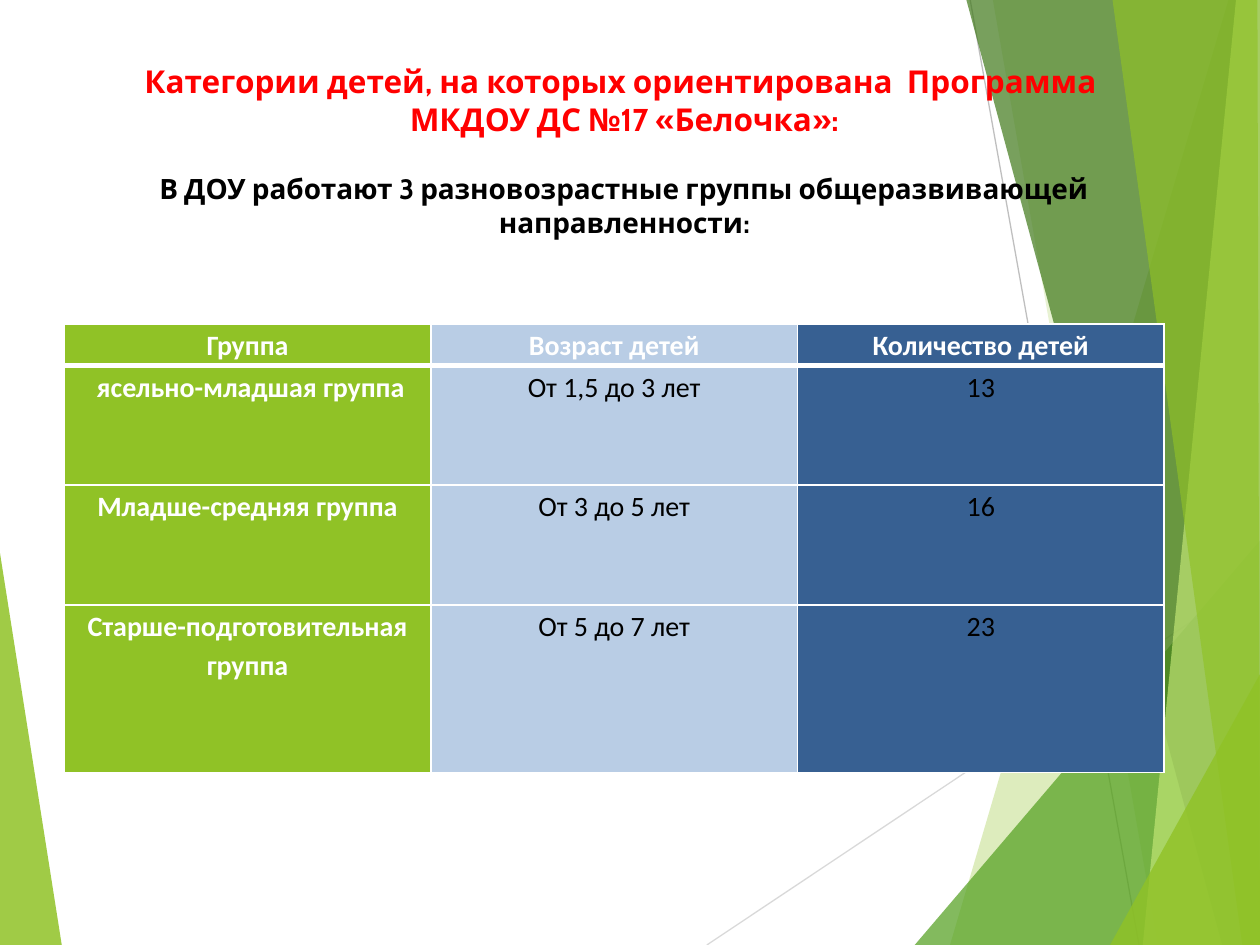
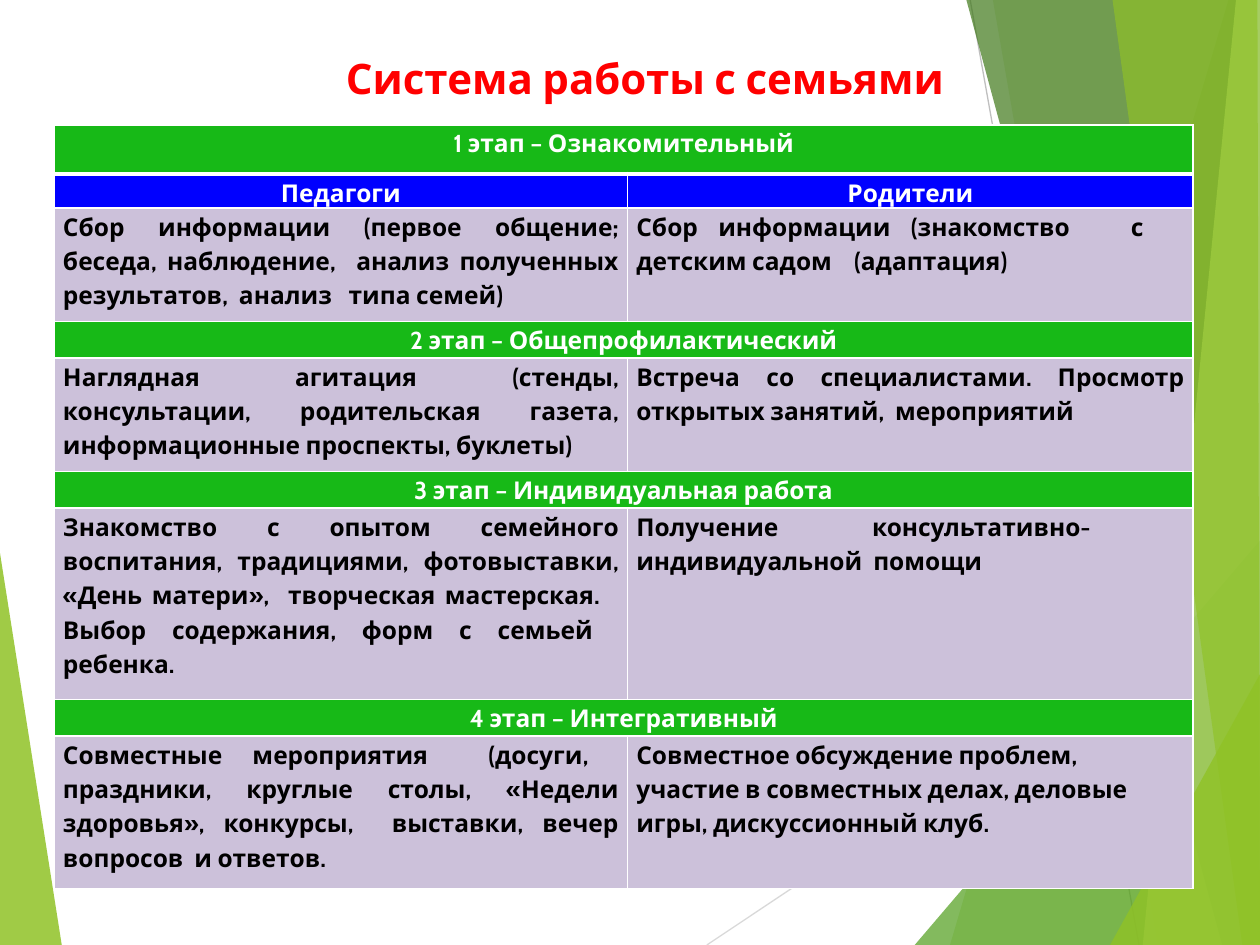
from dataclasses import dataclass

from pptx import Presentation
from pptx import util as u
from pptx.dml.color import RGBColor
from pptx.enum import shapes, text
from pptx.oxml import ns, xmlchemy

COLORS = {
    "white": "FFFFFF",
    "black": "000000",
    "red": "FF0000",
    "lime": "90C226",
    "leaf": "54A021",
    "forest": "3F7819",
    "pale_lime": "C0E474",
    "light_grey": "D9D9D9",
    "grey": "BFBFBF",
    "light_blue": "B9CDE5",
    "dark_blue": "376092",
    "stage_green": "17B917",
    "blue": "0000FF",
    "lilac": "CCC1DA",
}
HEADING_FONT = "Cabin"
TABLE_FONT = "Calibri"
CENTER, JUSTIFY, LEFT = text.PP_ALIGN.CENTER, text.PP_ALIGN.JUSTIFY, text.PP_ALIGN.LEFT


@dataclass(frozen=True)
class Facet:
    color: str
    opacity: int
    points: tuple[tuple[float, float], ...]


@dataclass(frozen=True)
class Ray:
    color: str
    start: tuple[float, float]
    end: tuple[float, float]


@dataclass(frozen=True)
class Line:
    text: str
    size: int
    color: str = "red"
    space_before: float = 0


@dataclass(frozen=True)
class CellStyle:
    fill: str
    color: str = "white"
    bold: bool = True
    align: text.PP_ALIGN = CENTER


@dataclass(frozen=True)
class Entry:
    text: str
    style: CellStyle


BACKDROP = (
    Facet("lime", 85, ((0, 4.39), (0.49, 7.5), (0, 7.5))),
    Ray("light_grey", (5.61, 7.5), (10, 4.57)),
    Ray("grey", (7.7, 0), (9.04, 7.5)),
    Facet("lime", 30, ((9.75, 0), (7.54, 7.5), (10, 7.5), (10, 0))),
    Facet("lime", 20, ((7.88, 0), (9.19, 7.5), (10, 7.5), (10, 0))),
    Facet("leaf", 72, ((7.26, 7.5), (10, 4.29), (10, 7.5))),
    Facet("forest", 70, ((7.67, 0), (9.7, 7.5), (10, 7.5), (10, 0))),
    Facet("pale_lime", 70, ((9.81, 0), (9.07, 7.5), (10, 7.5), (10, 0))),
    Facet("lime", 65, ((8.83, 0), (9.86, 7.5), (10, 7.5), (9.98, 0))),
    Facet("lime", 80, ((8.81, 7.5), (10, 5.35), (10, 7.5))),
)

GROUP_COLUMNS = ("lime", "light_blue", "dark_blue")
GROUP_ROWS = (
    ("Группа", "Возраст детей", "Количество детей"),
    (" ясельно-младшая группа", "От 1,5 до 3 лет", "13"),
    ("Младше-средняя группа", "От 3 до 5 лет", "16"),
    ("Старше-подготовительная группа", "От 5 до 7 лет", "23"),
)

STAGE = CellStyle("stage_green")
ROLE = CellStyle("blue")
WORK = CellStyle("lilac", "black", align=JUSTIFY)
WORK_LEFT = CellStyle("lilac", "black", align=LEFT)
FAMILY_ROWS = [
    [Entry("1 этап – Ознакомительный", STAGE)],
    [Entry("Педагоги", ROLE), Entry("Родители", ROLE)],
    [
        Entry("Сбор информации (первое общение; беседа, наблюдение,  анализ полученных "
              "результатов,  анализ   типа семей)", WORK),
        Entry("Сбор информации (знакомство   с   детским садом    (адаптация)", WORK),
    ],
    [Entry("2 этап – Общепрофилактический", STAGE)],
    [
        Entry("Наглядная агитация (стенды, консультации, родительская газета, "
              "информационные проспекты, буклеты)", WORK),
        Entry("Встреча со специалистами. Просмотр открытых занятий,  мероприятий ", WORK),
    ],
    [Entry("3 этап – Индивидуальная работа", STAGE)],
    [
        Entry("Знакомство с опытом семейного воспитания, традициями, фотовыставки, "
              "«День матери»,  творческая мастерская.   Выбор содержания, форм с семьей  "
              "ребенка.   ", WORK),
        Entry("Получение консультативно-  индивидуальной  помощи", WORK),
    ],
    [Entry("4 этап – Интегративный", STAGE)],
    [
        Entry("Совместные мероприятия  (досуги,  праздники, круглые столы, «Недели "
              "здоровья», конкурсы,  выставки, вечер вопросов  и ответов.", WORK),
        Entry("Совместное обсуждение проблем, участие в совместных делах, деловые игры, "
              "дискуссионный клуб.", WORK_LEFT),
    ],
]


def rgb(name: str) -> RGBColor:
    return RGBColor.from_string(COLORS[name])


def add_child(parent, tag: str, **attributes):
    child = xmlchemy.OxmlElement(tag)
    for name, value in attributes.items():
        child.set(name, str(value))
    parent.append(child)
    return child


def add_run(paragraph, words: str, font: str, size: int, color: str, bold: bool = True) -> None:
    run = paragraph.add_run()
    run.text = words
    run.font.name = font
    run.font.size = u.Pt(size)
    run.font.bold = bold
    run.font.color.rgb = rgb(color)


def draw_facet(slide, facet: Facet):
    first, *others = [(u.Inches(x), u.Inches(y)) for x, y in facet.points]
    builder = slide.shapes.build_freeform(*first)
    builder.add_line_segments(others, close=True)
    shape = builder.convert_to_shape()
    shape.shadow.inherit = False
    shape.fill.solid()
    shape.fill.fore_color.rgb = rgb(facet.color)
    shape.line.fill.background()
    color = shape.element.spPr.find(".//" + ns.qn("a:srgbClr"))
    add_child(color, "a:alpha", val=facet.opacity * 1000)
    return shape


def draw_ray(slide, ray: Ray):
    ends = [u.Inches(value) for value in ray.start + ray.end]
    connector = slide.shapes.add_connector(shapes.MSO_CONNECTOR.STRAIGHT, *ends)
    connector.line.color.rgb = rgb(ray.color)
    connector.line.width = u.Pt(0.75)
    add_child(connector.element.spPr, "a:effectLst")
    return connector


def draw_backdrop(slide) -> None:
    """Draw the facets and move them to the layout, which all slides share."""
    layout_tree = slide.slide_layout.shapes.element
    for number, part in enumerate(BACKDROP, start=100):
        draw = draw_facet if isinstance(part, Facet) else draw_ray
        element = draw(slide, part).element
        element.find(".//" + ns.qn("p:cNvPr")).set("id", str(number))
        layout_tree.append(element)


def set_title(slide, box: tuple[float, ...], lines: list[Line], anchor) -> None:
    title = slide.shapes.title
    title.left, title.top, title.width, title.height = [u.Inches(value) for value in box]
    frame = title.text_frame
    frame.word_wrap = True
    frame.auto_size = text.MSO_AUTO_SIZE.NONE
    frame.vertical_anchor = anchor
    for index, line in enumerate(lines):
        paragraph = frame.add_paragraph() if index else frame.paragraphs[0]
        paragraph.alignment = CENTER
        paragraph.space_before = u.Pt(line.space_before)
        add_run(paragraph, line.text, HEADING_FONT, line.size, line.color)


def set_borders(graphic_frame) -> None:
    """White 1 pt rules, with a 3 pt rule under the first row."""
    for row_index, row in enumerate(graphic_frame.element.iter(ns.qn("a:tr"))):
        widths = {"L": 1, "R": 1, "T": 3 if row_index == 1 else 1, "B": 1 if row_index else 3}
        for properties in row.iter(ns.qn("a:tcPr")):
            for position, (side, width) in enumerate(widths.items()):
                border = xmlchemy.OxmlElement(f"a:ln{side}")
                border.set("w", str(u.Pt(width)))
                fill = add_child(border, "a:solidFill")
                add_child(fill, "a:srgbClr", val=COLORS["white"])
                properties.insert(position, border)


def fill_cell(cell, entry: Entry, font: str, size: int) -> None:
    style = entry.style
    cell.margin_left = cell.margin_right = u.Inches(0.07)
    cell.margin_top = cell.margin_bottom = 0
    cell.fill.solid()
    cell.fill.fore_color.rgb = rgb(style.fill)
    paragraph = cell.text_frame.paragraphs[0]
    paragraph.alignment = style.align
    paragraph.line_spacing = 1.15
    add_run(paragraph, entry.text, font, size, style.color, style.bold)


def add_grid(slide, left: float, top: float, widths: list[float], heights: list[float],
             rows: list[list[Entry]], font: str, size: int) -> None:
    """Add a table; a row with a single entry spans all columns."""
    graphic_frame = slide.shapes.add_table(
        len(heights), len(widths), u.Inches(left), u.Inches(top),
        u.Inches(sum(widths)), u.Inches(sum(heights)))
    table = graphic_frame.table
    table.first_row = table.horz_banding = False
    for column, width in zip(table.columns, widths):
        column.width = u.Inches(width)
    for index, (height, entries) in enumerate(zip(heights, rows)):
        table.rows[index].height = u.Inches(height)
        if len(entries) == 1:
            table.cell(index, 0).merge(table.cell(index, len(widths) - 1))
        for column_index, entry in enumerate(entries):
            fill_cell(table.cell(index, column_index), entry, font, size)
    set_borders(graphic_frame)


def group_entries() -> list[list[Entry]]:
    rows = []
    for row_index, row in enumerate(GROUP_ROWS):
        entries = []
        for column_index, words in enumerate(row):
            heading = row_index == 0 or column_index == 0
            color = "white" if heading else "black"
            entries.append(Entry(words, CellStyle(GROUP_COLUMNS[column_index], color, heading)))
        rows.append(entries)
    return rows


def build_groups_slide(slide) -> None:
    set_title(slide, (0.35, 0.44, 9.21, 1.75), [
        Line("Категории детей, на которых ориентирована  Программа ", 18),
        Line("МКДОУ ДС №17 «Белочка»:", 18),
        Line("В ДОУ работают 3 разновозрастные группы общеразвивающей направленности:",
             16, "black", 19.5),
    ], text.MSO_ANCHOR.TOP)
    add_grid(slide, 0.51, 2.57, [2.91] * 3, [0.33, 0.95, 0.95, 1.33],
             group_entries(), TABLE_FONT, 16)


def build_families_slide(slide) -> None:
    set_title(slide, (1.46, 0.36, 7.32, 0.52), [Line("Система работы с семьями", 24)],
              text.MSO_ANCHOR.MIDDLE)
    add_grid(slide, 0.43, 0.99, [4.55, 4.49],
             [0.39, 0.25, 0.9, 0.29, 0.9, 0.29, 1.52, 0.29, 1.21],
             FAMILY_ROWS, HEADING_FONT, 14)


def main() -> None:
    presentation = Presentation()
    presentation.slide_width = u.Inches(10)
    presentation.slide_height = u.Inches(7.5)
    title_only = presentation.slide_layouts[5]
    groups_slide = presentation.slides.add_slide(title_only)
    draw_backdrop(groups_slide)
    build_groups_slide(groups_slide)
    build_families_slide(presentation.slides.add_slide(title_only))
    presentation.save("out.pptx")


if __name__ == "__main__":
    main()
